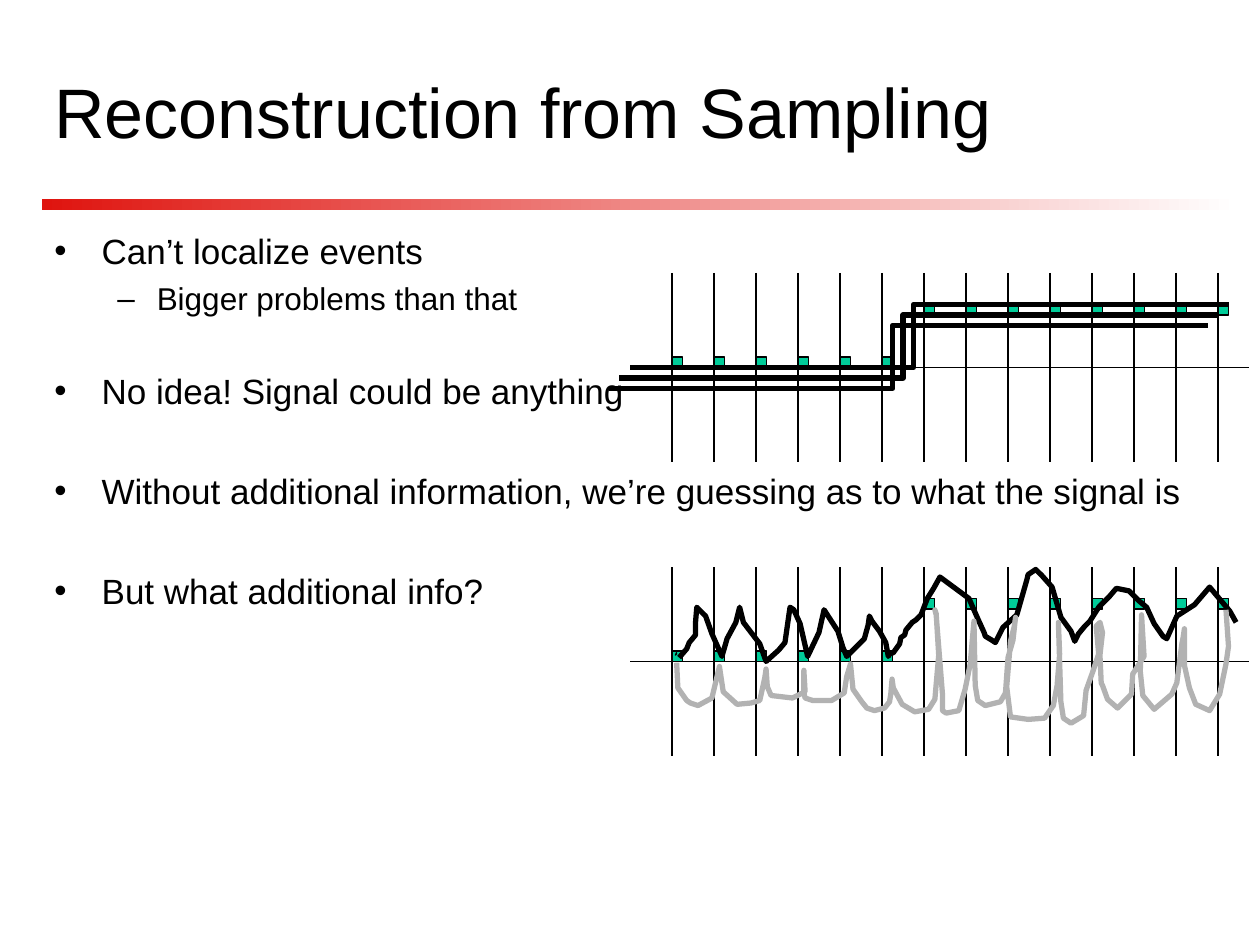
from dataclasses import dataclass

from lxml.etree import SubElement
from pptx import Presentation
from pptx.dml.color import RGBColor
from pptx.enum.shapes import MSO_CONNECTOR, MSO_SHAPE
from pptx.enum.text import MSO_ANCHOR
from pptx.oxml.ns import qn
from pptx.util import Pt

BLACK = RGBColor(0x00, 0x00, 0x00)
WHITE = RGBColor(0xFF, 0xFF, 0xFF)
RED = RGBColor(0xDF, 0x14, 0x0F)
GREEN = RGBColor(0x00, 0xCC, 0x99)
GRAY = RGBColor(0xB2, 0xB2, 0xB2)

FIRST_SAMPLE, SAMPLE_GAP, SAMPLE_COUNT, LOW_COUNT = 384, 24, 14, 6
MARKER = 6
TRACE_UNIT = 0.72


@dataclass(frozen=True)
class Bullet:
    text: str
    mark: str = "•"
    size: float = 20
    before: float = 33
    left: float = 27
    hang: float = 27


@dataclass(frozen=True)
class Trace:
    points: tuple
    color: RGBColor
    unit: float = TRACE_UNIT


BULLETS = (
    Bullet("Can’t localize events", before=0),
    Bullet("Bigger problems than that", "–", 18, 4.5, 58.5, 22.5),
    Bullet("No idea! Signal could be anything", before=30),
    Bullet("Without additional information, we’re guessing as to what the signal is"),
    Bullet("But what additional info?"),
)

STEPS = tuple(
    Trace(tuple((x - shift, y + shift) for x, y in
                ((360, 210), (522, 210), (522, 174), (702, 174))), BLACK, 1)
    for shift in (0, 6, 12)
)

UPPER_GUESS = Trace((
    (539, 522), (545, 515), (547, 510), (552, 504), (552, 494), (553, 482), (556, 485),
    (560, 489), (565, 503), (573, 521), (577, 507), (584, 494), (587, 482), (590, 494),
    (603, 511), (608, 525), (618, 516), (623, 510), (626, 489), (627, 482), (630, 484),
    (635, 495), (641, 521), (650, 502), (654, 484), (665, 501), (669, 514), (672, 521),
    (686, 507), (689, 496), (690, 489), (692, 493), (698, 501), (703, 510), (705, 521),
    (706, 519), (709, 518), (714, 511), (715, 506), (718, 504), (719, 500), (724, 494),
    (727, 492), (731, 488), (736, 475), (741, 467), (746, 458), (769, 475), (776, 491),
    (781, 502), (782, 505), (787, 508), (790, 510), (796, 498), (807, 488), (815, 460),
    (816, 456), (822, 452), (827, 457), (835, 466), (842, 490), (850, 501), (853, 509),
    (854, 507), (856, 503), (861, 497), (865, 493), (872, 482), (880, 474), (886, 467),
    (896, 469), (904, 477), (910, 482), (916, 495), (923, 505), (926, 507), (934, 489),
    (948, 480), (954, 473), (960, 466), (976, 485), (981, 494),
), BLACK)

LOWER_GUESS = Trace((
    (537, 526), (538, 546), (545, 556), (548, 558), (554, 560), (565, 554), (571, 529),
    (574, 549), (585, 559), (596, 558), (603, 556), (607, 538), (608, 531), (609, 545),
    (612, 552), (629, 554), (639, 549), (638, 532), (638, 550), (639, 554), (645, 556),
    (660, 556), (670, 550), (672, 537), (675, 527), (677, 547), (684, 557), (688, 562),
    (694, 564), (702, 562), (706, 557), (707, 551), (708, 539), (709, 546), (716, 559),
    (726, 565), (737, 563), (742, 555), (745, 520), (743, 487), (742, 484), (743, 488),
    (748, 551), (748, 564), (751, 566), (761, 564), (766, 547), (770, 527), (773, 493),
    (774, 544), (776, 556), (782, 560), (794, 557), (798, 550), (800, 522), (804, 508),
    (806, 490), (805, 497), (802, 509), (799, 545), (802, 569), (816, 571), (829, 570),
    (836, 560), (839, 544), (841, 519), (840, 494), (842, 557), (844, 570), (850, 574),
    (860, 568), (862, 548), (867, 534), (872, 519), (870, 497), (873, 494), (875, 502),
    (873, 520), (874, 542), (875, 544), (879, 555), (887, 562), (898, 551), (899, 535),
    (908, 521), (906, 488), (905, 533), (907, 552), (916, 563), (930, 551), (934, 542),
    (938, 511), (939, 506), (940, 499), (940, 528), (944, 546), (949, 559), (960, 564),
    (968, 551), (973, 527), (975, 513), (973, 484),
), GRAY)


def add_span(para, text: str, *, size: float, color: RGBColor = BLACK) -> None:
    span = para.add_run()
    span.text = text
    span.font.name = "Arial"
    span.font.size = Pt(size)
    span.font.color.rgb = color


def add_text_frame(page, left: float, top: float, width: float, height: float, anchor):
    frame = page.shapes.add_textbox(Pt(left), Pt(top), Pt(width), Pt(height)).text_frame
    frame.word_wrap = True
    frame.vertical_anchor = anchor
    return frame


def add_bullets(page) -> None:
    frame = add_text_frame(page, 24, 127.5, 684, 400, MSO_ANCHOR.TOP)
    for index, bullet in enumerate(BULLETS):
        para = frame.add_paragraph() if index else frame.paragraphs[0]
        para.space_before = Pt(bullet.before)
        properties = para._p.get_or_add_pPr()
        properties.set("marL", str(Pt(bullet.left)))
        properties.set("indent", str(-Pt(bullet.hang)))
        SubElement(properties, qn("a:buFont")).set("typeface", "Arial")
        SubElement(properties, qn("a:buChar")).set("char", bullet.mark)
        add_span(para, bullet.text, size=bullet.size)


def add_rule(page) -> None:
    rule = page.shapes.add_shape(MSO_SHAPE.RECTANGLE, Pt(24), Pt(114), Pt(684), Pt(6))
    rule.shadow.inherit = False
    rule.line.fill.background()
    rule.fill.gradient()
    rule.fill.gradient_angle = 0
    for stop, color in zip(rule.fill.gradient_stops, (RED, WHITE)):
        stop.color.rgb = color


def add_line(group, x1: float, y1: float, x2: float, y2: float) -> None:
    line = group.shapes.add_connector(MSO_CONNECTOR.STRAIGHT, Pt(x1), Pt(y1), Pt(x2), Pt(y2))
    line.line.color.rgb = BLACK
    line.line.width = Pt(0.75)
    SubElement(line._element.spPr, qn("a:effectLst"))


def fill_green(shape) -> None:
    shape.shadow.inherit = False
    shape.fill.solid()
    shape.fill.fore_color.rgb = GREEN
    shape.line.color.rgb = BLACK
    shape.line.width = Pt(0.75)


def add_sample_grid(page, axis: float) -> None:
    group = page.shapes.add_group_shape()
    add_line(group, 360, axis, 714, axis)
    positions = [FIRST_SAMPLE + SAMPLE_GAP * index for index in range(SAMPLE_COUNT)]
    for x in positions:
        add_line(group, x, axis - 54, x, axis + 54)
    for index, x in enumerate(positions):
        top = axis - (6 if index < LOW_COUNT else 36)
        fill_green(group.shapes.add_shape(
            MSO_SHAPE.RECTANGLE, Pt(x), Pt(top), Pt(MARKER), Pt(MARKER)))


def build_outline(page, points: tuple, unit: float, close: bool):
    builder = page.shapes.build_freeform(*points[0], scale=Pt(unit))
    builder.add_line_segments(points[1:], close=close)
    return builder.convert_to_shape()


def add_trace(page, trace: Trace) -> None:
    shape = build_outline(page, trace.points, trace.unit, False)
    shape.shadow.inherit = False
    shape.fill.background()
    shape.line.color.rgb = trace.color
    shape.line.width = Pt(3)


def main() -> None:
    deck = Presentation()
    deck.slide_width, deck.slide_height = Pt(720), Pt(540)
    page = deck.slides.add_slide(deck.slide_layouts[6])
    add_rule(page)
    title = add_text_frame(page, 24, 24, 600, 78, MSO_ANCHOR.MIDDLE)
    add_span(title.paragraphs[0], "Reconstruction from Sampling", size=40)
    add_bullets(page)
    add_sample_grid(page, 210)
    for step in STEPS:
        add_trace(page, step)
    add_sample_grid(page, 378)
    fill_green(build_outline(page, ((536, 520), (537, 519), (537, 518)), TRACE_UNIT, True))
    add_trace(page, UPPER_GUESS)
    add_trace(page, LOWER_GUESS)
    deck.save("out.pptx")


if __name__ == "__main__":
    main()
